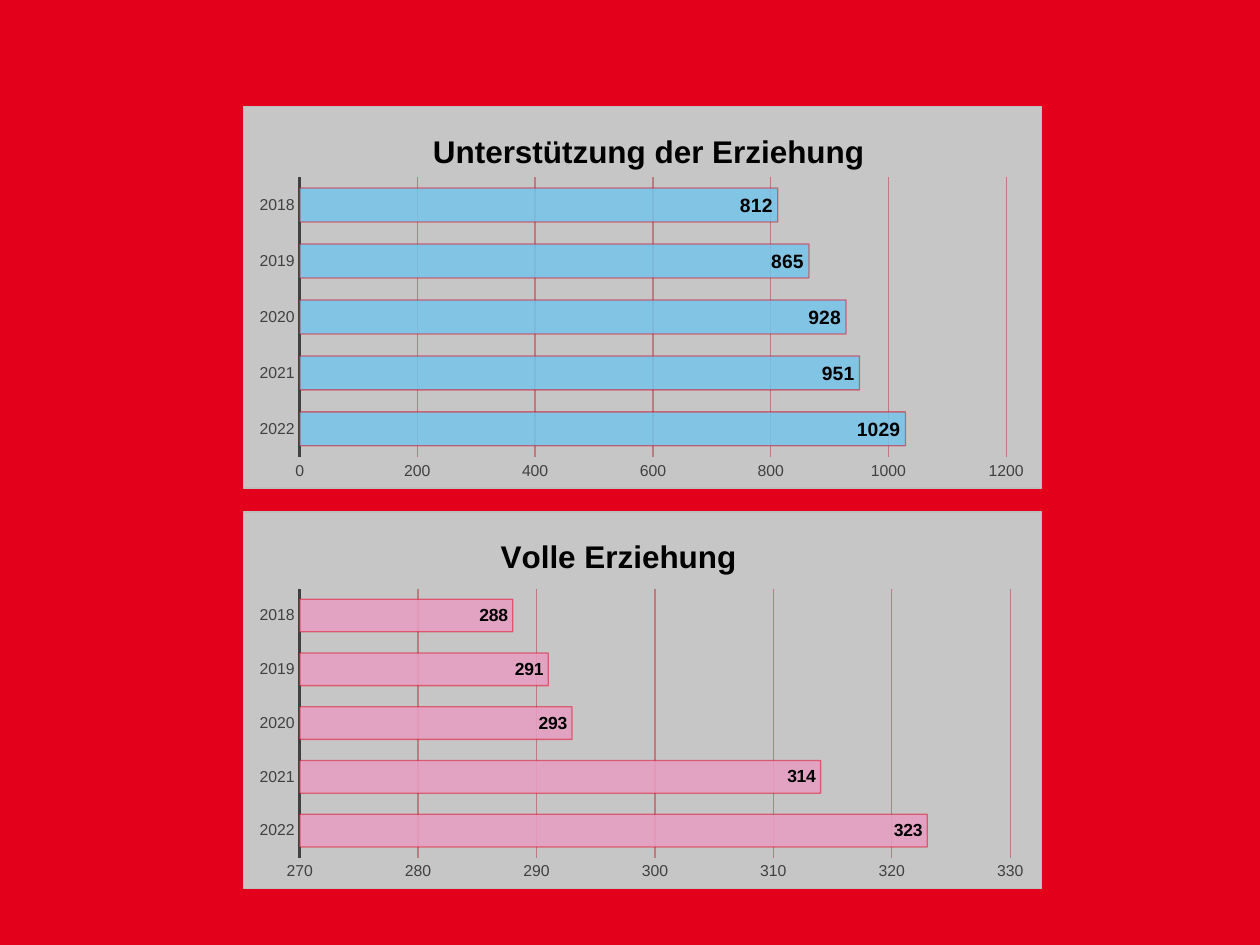
"""Build a slide with two bar charts on childcare support by year."""
import lxml.etree
import pptx
import pptx.chart.data
import pptx.dml.color
import pptx.enum.chart
import pptx.util

COLOURS = {
    "red": "E2001A", "panel": "C6C6C7", "border": "BFBFBF", "blue": "75C4EA",
    "pink": "E89EC3", "grid": "BC7B80", "axis": "404040", "text": "000000",
}
YEARS = ["2022", "2021", "2020", "2019", "2018"]
CHARTS = [
    {"title": "Unterstützung der Erziehung", "series": "Series 1", "bar": "blue",
     "values": [1029, 951, 928, 865, 812], "scale": (0, 1200, 200), "label": 11,
     "top": 0.112, "height": 0.405, "title_at": {"x": 0.23, "y": 0.05},
     "plot_at": {"x": 0.07, "y": 0.185, "w": 0.886, "h": 0.734}},
    {"title": "Volle Erziehung", "series": "Volle Erziehung", "bar": "pink",
     "values": [323, 314, 293, 291, 288], "scale": (270, 330, 10), "label": 10,
     "top": 0.541, "height": 0.4, "title_at": {"x": 0.315, "y": 0.05},
     "plot_at": {"x": 0.07, "y": 0.204, "w": 0.891, "h": 0.714}},
]
DRAWING = "http://schemas.openxmlformats.org/drawingml/2006/main"
CHART = "http://schemas.openxmlformats.org/drawingml/2006/chart"


def style_font(font, size, colour, bold=False):
    font.name, font.size, font.bold = "Arial", pptx.util.Pt(size), bold
    font.color.rgb = pptx.dml.color.RGBColor.from_string(COLOURS[colour])


def set_layout(parent, index, shares):
    for old in parent.findall(f"{{{CHART}}}layout"):
        parent.remove(old)
    layout = lxml.etree.Element(f"{{{CHART}}}layout")
    manual = lxml.etree.SubElement(layout, f"{{{CHART}}}manualLayout")
    if "w" in shares:
        lxml.etree.SubElement(manual, f"{{{CHART}}}layoutTarget", val="inner")
    for side in "xy":
        lxml.etree.SubElement(manual, f"{{{CHART}}}{side}Mode", val="edge")
    for side, share in shares.items():
        lxml.etree.SubElement(manual, f"{{{CHART}}}{side}", val=str(share))
    parent.insert(index, layout)


deck = pptx.Presentation()
deck.slide_width, deck.slide_height = pptx.util.Inches(10), pptx.util.Inches(7.5)
width, height = deck.slide_width, deck.slide_height
page = deck.slides.add_slide(deck.slide_layouts[6])
page.background.fill.solid()
page.background.fill.fore_color.rgb = pptx.dml.color.RGBColor.from_string(COLOURS["red"])

for item in CHARTS:
    data = pptx.chart.data.CategoryChartData()
    data.categories = YEARS
    data.add_series(item["series"], item["values"])
    chart = page.shapes.add_chart(
        pptx.enum.chart.XL_CHART_TYPE.BAR_CLUSTERED,
        int(width * 0.193), int(height * item["top"]),
        int(width * 0.634), int(height * item["height"]), data).chart
    chart.has_legend = False
    style_font(chart.font, 10, "text")

    panel = lxml.etree.fromstring(
        f'<c:spPr xmlns:c="{CHART}" xmlns:a="{DRAWING}">'
        f'<a:solidFill><a:srgbClr val="{COLOURS["panel"]}"/></a:solidFill>'
        f'<a:ln w="9525"><a:solidFill><a:srgbClr val="{COLOURS["border"]}"/></a:solidFill></a:ln>'
        '</c:spPr>')
    chart.element.find(f"{{{CHART}}}chart").addnext(panel)

    chart.has_title = True
    heading = chart.chart_title.text_frame
    heading.text = item["title"]
    style_font(heading.paragraphs[0].font, 18, "text", True)
    set_layout(chart.element.find(f".//{{{CHART}}}title"), 1, item["title_at"])
    set_layout(chart.element.find(f".//{{{CHART}}}plotArea"), 0, item["plot_at"])

    for axis in (chart.category_axis, chart.value_axis):
        axis.major_tick_mark = pptx.enum.chart.XL_TICK_MARK.NONE
        axis.minor_tick_mark = pptx.enum.chart.XL_TICK_MARK.NONE
        style_font(axis.tick_labels.font, 9, "axis")
    years, amounts = chart.category_axis, chart.value_axis
    amounts.minimum_scale, amounts.maximum_scale, amounts.major_unit = item["scale"]
    amounts.has_major_gridlines = True
    amounts.format.line.fill.background()

    plot = chart.plots[0]
    plot.gap_width, plot.vary_by_categories = 65, False
    series = plot.series[0]
    series.format.fill.solid()
    series.format.fill.fore_color.rgb = pptx.dml.color.RGBColor.from_string(COLOURS[item["bar"]])
    for line, colour, points in (
            (years.format.line, "axis", 1.5),
            (amounts.major_gridlines.format.line, "grid", 0.75),
            (series.format.line, "red", 0.75)):
        line.color.rgb = pptx.dml.color.RGBColor.from_string(COLOURS[colour])
        line.width = pptx.util.Pt(points)
    bar_style = chart.element.find(f".//{{{CHART}}}ser/{{{CHART}}}spPr")
    shades = list(bar_style.iter(f"{{{DRAWING}}}srgbClr"))
    for shade, opacity in zip(shades, (85000, 50000)):
        lxml.etree.SubElement(shade, f"{{{DRAWING}}}alpha", val=str(opacity))

    labels = series.data_labels
    labels.show_value = True
    labels.position = pptx.enum.chart.XL_LABEL_POSITION.INSIDE_END
    style_font(labels.font, item["label"], "text", True)

deck.save("out.pptx")
